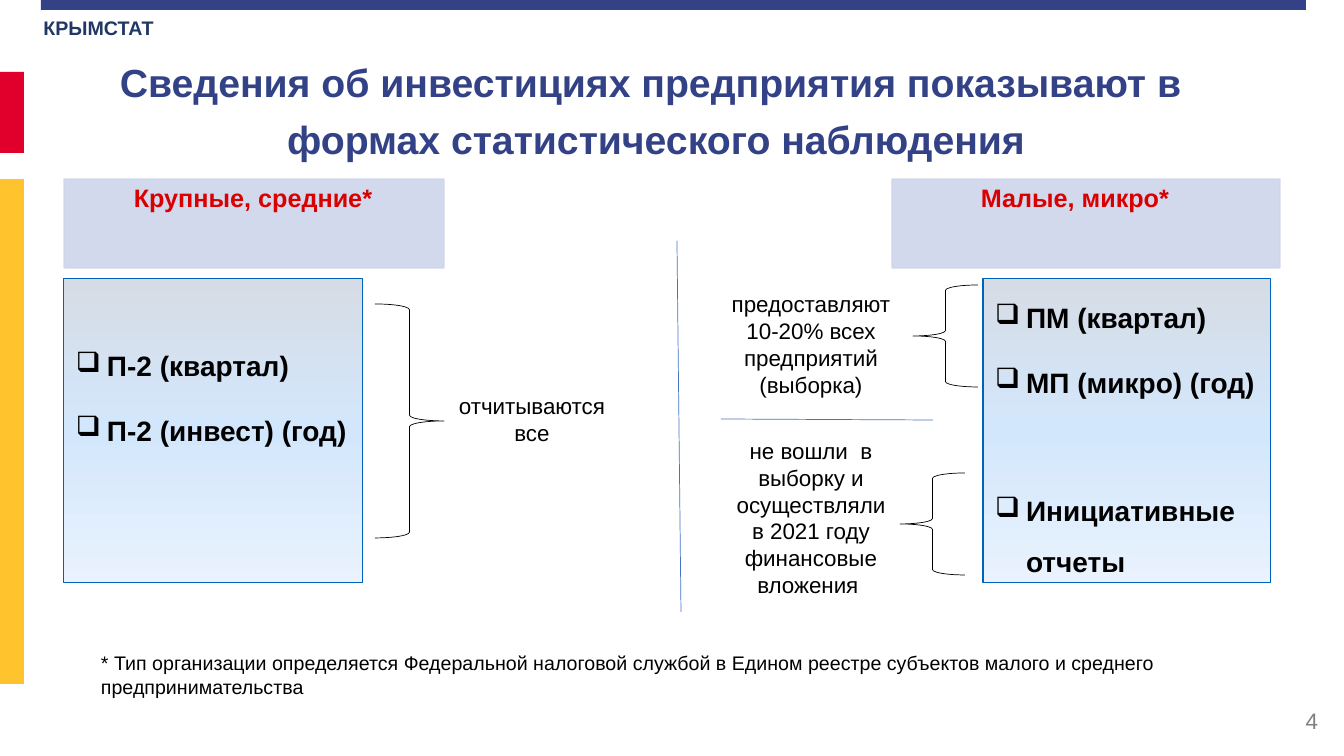
from copy import deepcopy
from dataclasses import dataclass

from lxml.etree import SubElement
from pptx import Presentation
from pptx.dml.color import RGBColor
from pptx.enum.shapes import MSO_CONNECTOR, MSO_SHAPE
from pptx.enum.text import MSO_ANCHOR, PP_ALIGN
from pptx.oxml.ns import qn
from pptx.util import Pt

EMU_PER_PX = 914400 / 100.8


@dataclass(frozen=True)
class Theme:
    font: str = "Arial"
    navy: str = "334286"
    red: str = "E1002B"
    yellow: str = "FFC32E"
    agency: str = "203864"
    header: str = "CFD5EA"
    header_text: str = "DA0000"
    outline: str = "0062BA"
    divider: str = "4472C4"
    gradient: tuple = ("D6DCE5", "D3E7FC", "E9F2FD")
    grey: str = "808080"
    black: str = "000000"
    white: str = "FFFFFF"
    title_size: int = 28
    form_size: int = 20
    header_size: int = 18
    body_size: int = 16
    small_size: int = 14


THEME = Theme()


def px(length):
    return round(length * EMU_PER_PX)


def rgb(value):
    return RGBColor.from_string(value)


def add_box(slide, box, fill=None, line=None, width=1, kind=MSO_SHAPE.RECTANGLE):
    shape = slide.shapes.add_shape(kind, *map(px, box))
    shape.shadow.inherit = False
    if fill:
        shape.fill.solid()
        shape.fill.fore_color.rgb = rgb(fill)
    else:
        shape.fill.background()
    if line:
        shape.line.color.rgb = rgb(line)
        shape.line.width = Pt(width)
    else:
        shape.line.fill.background()
    return shape


def add_text_box(slide, box):
    return slide.shapes.add_textbox(*map(px, box))


def write(shape, texts, size, color=THEME.black, bold=False, anchor=MSO_ANCHOR.TOP,
          insets=(10, 5, 10, 5), bullet=None, spaces=None, **paragraph_format):
    """Fill a shape with paragraphs; spaces lists the points before each one."""
    frame = shape.text_frame
    frame.word_wrap = True
    frame.vertical_anchor = anchor
    for side, inset in zip(("left", "top", "right", "bottom"), insets):
        setattr(frame, f"margin_{side}", px(inset))
    for index, text in enumerate(texts):
        paragraph = frame.paragraphs[0] if index == 0 else frame.add_paragraph()
        paragraph.text = text
        for name, value in {"alignment": PP_ALIGN.LEFT, **paragraph_format}.items():
            setattr(paragraph, name, value)
        if spaces:
            paragraph.space_before = Pt(spaces[index])
        if bullet:
            add_bullet(paragraph, bullet)
        font_format = {"name": THEME.font, "size": Pt(size), "bold": bold}
        for name, value in font_format.items():
            setattr(paragraph.font, name, value)
        paragraph.font.color.rgb = rgb(color)


def add_bullet(paragraph, character):
    properties = paragraph._p.get_or_add_pPr()
    properties.set("marL", str(px(33)))
    properties.set("indent", str(px(-31)))
    SubElement(properties, qn("a:buChar")).set("char", character)


def set_opacity(shape, percent):
    for color in shape._element.spPr.iter(qn("a:srgbClr")):
        SubElement(color, qn("a:alpha")).set("val", str(percent * 1000))


def set_gradient(shape, colors):
    """Blend the colours evenly from top to bottom."""
    shape.fill.gradient()
    shape.fill.gradient_angle = 270
    stop_list = shape._element.spPr.find(qn("a:gradFill")).find(qn("a:gsLst"))
    while len(stop_list) < len(colors):
        stop_list.append(deepcopy(stop_list[0]))
    for index, (stop, color) in enumerate(zip(shape.fill.gradient_stops, colors)):
        stop.position = index / (len(colors) - 1)
        stop.color.rgb = rgb(color)


def add_divider(slide, start, end):
    line = slide.shapes.add_connector(MSO_CONNECTOR.STRAIGHT, *map(px, start + end))
    line.line.color.rgb = rgb(THEME.divider)
    line.line.width = Pt(0.5)
    SubElement(line._element.spPr, qn("a:effectLst"))


def add_frame(slide, width):
    """Draw the coloured edges, the agency name and the page number."""
    add_box(slide, (41, 0, width - 79, 10), THEME.navy)
    add_box(slide, (0, 72, 24, 81), THEME.red)
    add_box(slide, (0, 179, 24, 505), THEME.yellow)
    agency = add_box(slide, (33, 16, 131, 24), THEME.white)
    write(agency, ["КРЫМСТАТ"], THEME.small_size, THEME.agency, bold=True,
          anchor=MSO_ANCHOR.MIDDLE, insets=(0, 0, 0, 0), alignment=PP_ALIGN.CENTER)
    number = add_text_box(slide, (width - 318, 701, 302, 40))
    write(number, ["4"], THEME.body_size, THEME.grey, anchor=MSO_ANCHOR.MIDDLE,
          alignment=PP_ALIGN.RIGHT)


def add_title(slide, box):
    lines = ["Сведения об инвестициях предприятия показывают в ",
             "формах статистического наблюдения"]
    write(add_text_box(slide, box), lines, THEME.title_size, THEME.navy, bold=True,
          spaces=(0, 10), line_spacing=0.9, alignment=PP_ALIGN.CENTER)


def add_header(slide, box, text, right_inset=9):
    header = add_box(slide, box, THEME.header, THEME.header)
    set_opacity(header, 90)
    write(header, [text], THEME.header_size, THEME.header_text, bold=True,
          insets=(7, 7, right_inset, 10), line_spacing=0.9, alignment=PP_ALIGN.CENTER)


def add_forms(slide, box, forms, spaces, top_inset=5):
    panel = add_box(slide, box, line=THEME.outline, width=0.75)
    set_gradient(panel, THEME.gradient)
    write(panel, forms, THEME.form_size, bold=True, insets=(10, top_inset, 10, 5),
          bullet="❑", spaces=spaces, line_spacing=1.5)


def add_brace(slide, box, kind):
    add_box(slide, box, line=THEME.black, width=0.5, kind=kind)


def add_remark(slide, box, text):
    write(add_text_box(slide, box), [text], THEME.body_size, alignment=PP_ALIGN.CENTER)


def add_large_side(slide, box):
    left, top, width = box
    add_header(slide, (left, top, width, 89), "Крупные, средние*")
    add_forms(slide, (left, top + 100, 299, 304),
              ["П-2 (квартал)", "П-2 (инвест) (год)"], spaces=(0, 10), top_inset=53)
    add_brace(slide, (left + 311, top + 125, 69, 234), MSO_SHAPE.RIGHT_BRACE)
    add_remark(slide, (left + 380, top + 208, 176, 64), "отчитываются все")


def add_small_side(slide, box):
    left, top, width = box
    add_header(slide, (left + 171, top, width - 171, 89), "Малые, микро*", right_inset=29)
    add_forms(slide, (left + 262, top + 100, 288, 304),
              ["ПМ (квартал)", "МП (микро) (год)", "Инициативные отчеты"],
              spaces=(0, 10, 56))
    groups = [
        (106, 192, 106, 119, "предоставляют 10-20% всех предприятий (выборка)"),
        (253, 179, 294, 173,
         "не вошли  в выборку и осуществляли в 2021 году финансовые вложения "),
    ]
    for text_top, brace_left, brace_top, height, text in groups:
        add_remark(slide, (left, top + text_top, 180, height), text)
        add_brace(slide, (left + brace_left, top + brace_top, 65, 102),
                  MSO_SHAPE.LEFT_BRACE)
    add_divider(slide, (left, top + 240), (left + 212, top + 241))


def add_footnote(slide, box):
    text = ("* Тип организации определяется Федеральной налоговой службой в Едином "
            "реестре субъектов малого и среднего предпринимательства")
    write(add_box(slide, box, THEME.white), [text], THEME.small_size)


def main():
    presentation = Presentation()
    width, height = 1344, 756
    presentation.slide_width, presentation.slide_height = px(width), px(height)
    slide = presentation.slides.add_slide(presentation.slide_layouts[6])
    add_frame(slide, width)
    add_title(slide, (32, 59, 1248, 103))
    add_large_side(slide, (64, 179, 380))
    add_divider(slide, (677, 241), (681, 612))
    add_small_side(slide, (721, 179, 559))
    add_footnote(slide, (91, 646, 1198, 57))
    presentation.save("out.pptx")


if __name__ == "__main__":
    main()
